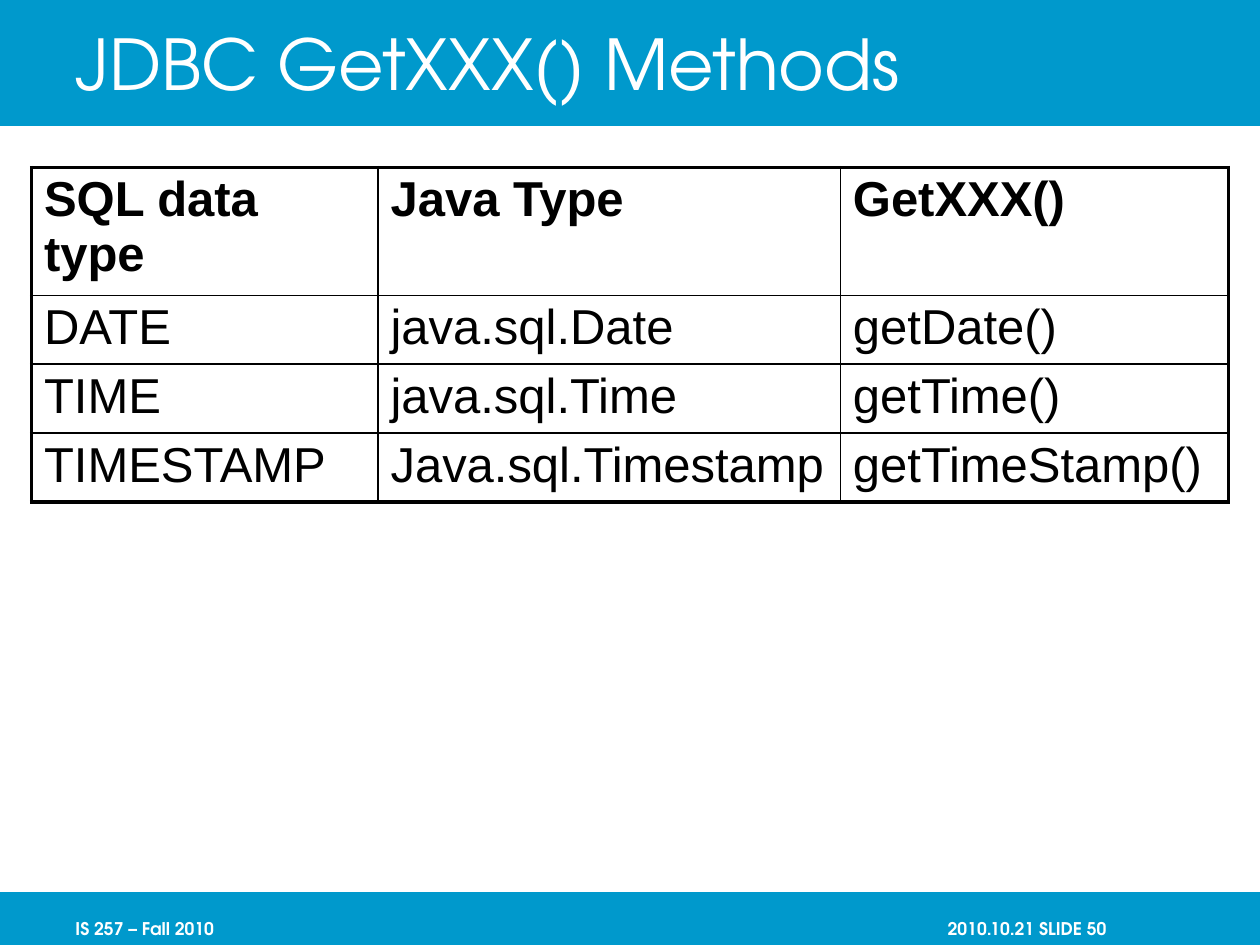
from dataclasses import dataclass
from pptx import Presentation
from pptx.dml.color import RGBColor
from pptx.enum.shapes import MSO_SHAPE
from pptx.enum.text import MSO_ANCHOR, PP_ALIGN
from pptx.oxml import parse_xml
from pptx.oxml.ns import nsdecls
from pptx.util import Inches, Pt

# Content
TITLE = "JDBC GetXXX() Methods"
ROWS = [
    ("SQL data type", "Java Type", "GetXXX()"),
    ("DATE", "java.sql.Date", "getDate()"),
    ("TIME", "java.sql.Time", "getTime()"),
    ("TIMESTAMP", "Java.sql.Timestamp", "getTimeStamp()"),
]
# Footer text, left edge, right inset, alignment
NOTES = [
    ("IS 257 – Fall 2010", 0.5, 0, PP_ALIGN.LEFT),
    ("2010.10.21 SLIDE 50", 7.42, 0.72, PP_ALIGN.RIGHT),
]


@dataclass(frozen=True)
class Theme:
    band: str = "0099CC"
    light: str = "FFFFFF"
    ink: str = "000000"
    head: str = "TeX Gyre Adventor"
    body: str = "Arial"
    title: int = 40
    cell: int = 28
    note: int = 10
    thick: float = 2.25
    thin: float = 1


THEME = Theme()
WIDE, HIGH = 10, 7.5
TOP, FOOT = 1, 0.42
COLS = (2.75, 3.67, 3.08)
TALL, ROW = 0.97, 0.53


def style(frame, face, size, color, bold=False, align=PP_ALIGN.LEFT):
    for para in frame.paragraphs:
        para.alignment = align
        for run in para.runs:
            font = run.font
            font.name, font.size, font.bold = face, Pt(size), bold
            font.color.rgb = RGBColor.from_string(color)


def place(shape, *box):
    shape.left, shape.top, shape.width, shape.height = map(Inches, box)


def border(cell, sides):
    props = cell._tc.get_or_add_tcPr()
    for spot, (side, outer) in enumerate(sides.items()):
        width = Pt(THEME.thick if outer else THEME.thin)
        props.insert(spot, parse_xml(
            f'<a:ln{side} {nsdecls("a")} w="{width}"><a:solidFill>'
            f'<a:srgbClr val="{THEME.ink}"/></a:solidFill></a:ln{side}>'))


deck = Presentation()
deck.slide_width, deck.slide_height = Inches(WIDE), Inches(HIGH)
slide = deck.slides.add_slide(deck.slide_layouts[5])
shapes = slide.shapes

# Top and bottom bands, kept behind the title
for spot, (top, height) in enumerate([(0, TOP), (HIGH - FOOT, FOOT)]):
    band = shapes.add_shape(MSO_SHAPE.RECTANGLE, 0, 0, 0, 0)
    place(band, 0, top, WIDE, height)
    band.shadow.inherit = False
    band.fill.solid()
    band.fill.fore_color.rgb = RGBColor.from_string(THEME.band)
    band.line.fill.background()
    shapes._spTree.insert(2 + spot, band._element)

# Title
title = shapes.title
place(title, 0.5, 0, 8.5, TOP)
title.text_frame.text = TITLE
title.text_frame.vertical_anchor = MSO_ANCHOR.MIDDLE
style(title.text_frame, THEME.head, THEME.title, THEME.light)

# Footer
for text, left, inset, align in NOTES:
    note = shapes.add_textbox(0, 0, 0, 0)
    place(note, left, HIGH - FOOT, 2.08, FOOT)
    frame = note.text_frame
    frame.word_wrap = True
    frame.vertical_anchor = MSO_ANCHOR.BOTTOM
    frame.margin_right = Inches(inset)
    frame.text = text
    style(frame, THEME.head, THEME.note, THEME.light, True, align)

# Table
last, end = len(ROWS) - 1, len(COLS) - 1
table = shapes.add_table(
    len(ROWS), len(COLS), Inches(0.25), Inches(1.33),
    Inches(sum(COLS)), Inches(TALL + last * ROW)).table
table.horz_banding = False
for col, width in zip(table.columns, COLS):
    col.width = Inches(width)
for r, texts in enumerate(ROWS):
    table.rows[r].height = Inches(ROW if r else TALL)
    for c, text in enumerate(texts):
        cell = table.cell(r, c)
        cell.text = text
        cell.margin_top = cell.margin_bottom = Inches(0.04)
        cell.fill.background()
        style(cell.text_frame, THEME.body, THEME.cell, THEME.ink, r == 0)
        border(cell, {"L": c == 0, "R": c == end, "T": r == 0, "B": r == last})

deck.save("out.pptx")
